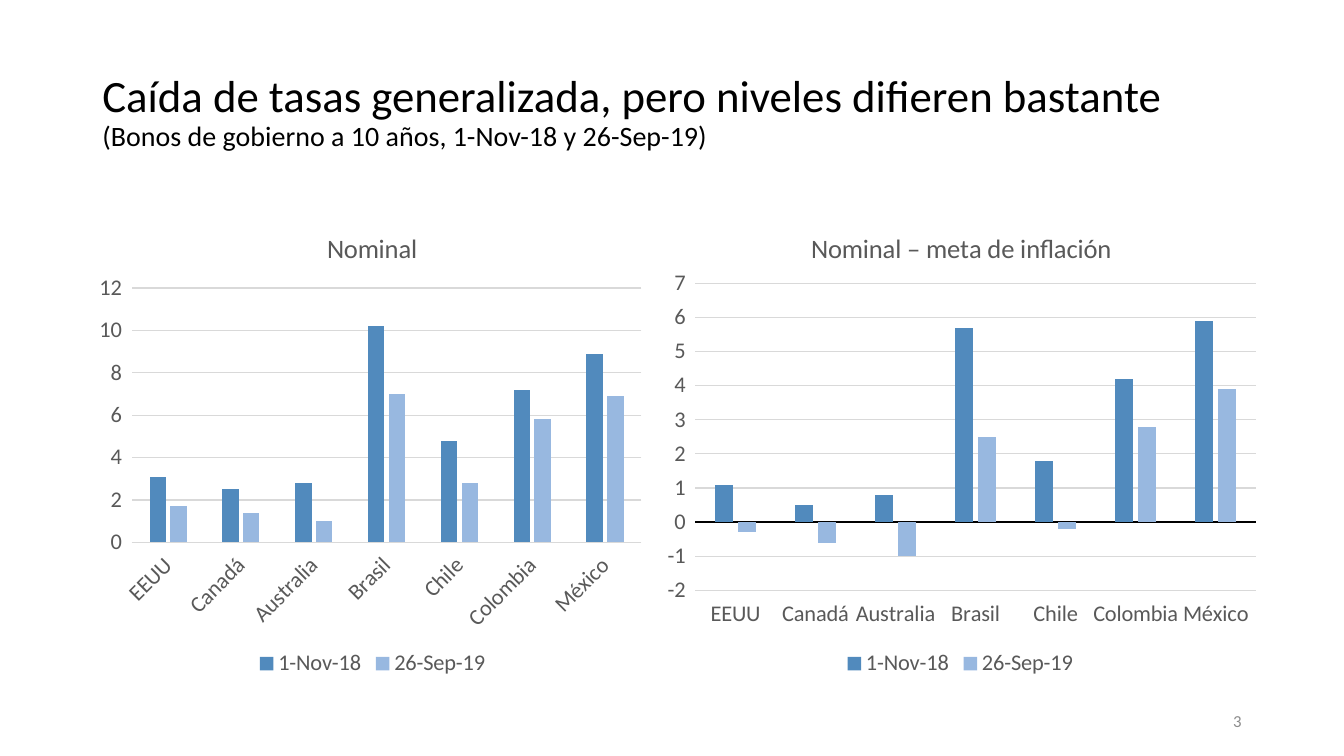
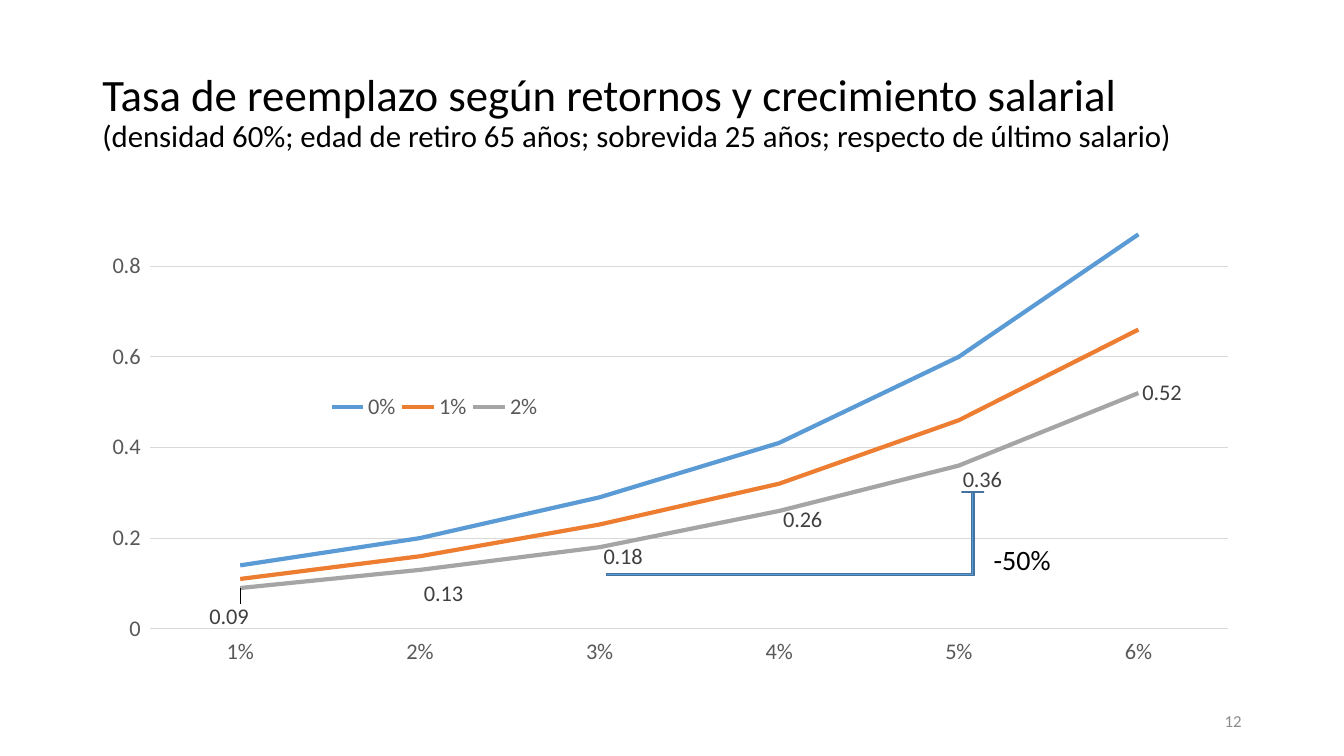
from lxml.etree import SubElement
from pptx import Presentation
from pptx.chart.data import CategoryChartData
from pptx.dml.color import RGBColor
from pptx.enum.chart import (XL_CHART_TYPE, XL_LABEL_POSITION, XL_LEGEND_POSITION,
                             XL_TICK_LABEL_POSITION, XL_TICK_MARK)
from pptx.enum.shapes import MSO_SHAPE
from pptx.enum.text import MSO_ANCHOR, PP_ALIGN
from pptx.oxml import parse_xml
from pptx.oxml.ns import nsdecls, qn
from pptx.util import Cm, Pt

FONT = "Calibri"
INK = {
    "text": "000000", "page": "8C8C8C", "axis": "595959", "grid": "D9D9D9",
    "label": "404040", "dark": "518ABD", "light": "98B8E0", "blue": "5B9BD5",
    "orange": "ED7D31", "gray": "A5A5A5", "edge": "43739E",
}
LEFT, TOP, WIDTH, HIGH = 2.33, 5.08, 29.21, 12.1
LANDS = ["EEUU", "Canadá", "Australia", "Brasil", "Chile", "Colombia", "México"]
DATES = [("1-Nov-18", "dark"), ("26-Sep-19", "light")]

RATES = {
    "title": "Caída de tasas generalizada, pero niveles difieren bastante",
    "sub": "(Bonos de gobierno a 10 años, 1-Nov-18 y 26-Sep-19)",
    "size": 20, "page": "3",
}
BARS = [
    {
        "title": "Nominal", "left": LEFT, "width": 14.12,
        "plot": (0.07, 0.18, 0.91, 0.53), "head": (0.41, 0.05),
        "scale": (0, 12, 2), "base": ("grid", 0.75), "turn": -45,
        "vals": [(3.1, 2.5, 2.8, 10.2, 4.8, 7.2, 8.9),
                 (1.7, 1.4, 1, 7, 2.8, 5.8, 6.9)],
    },
    {
        "title": "Nominal – meta de inflación", "left": 16.44, "width": 15.52,
        "plot": (0.07, 0.17, 0.91, 0.64), "head": (0.25, 0.05),
        "scale": (-2, 7, 1), "base": ("text", 1), "turn": 0,
        "vals": [(1.1, 0.5, 0.8, 5.7, 1.8, 4.2, 5.9),
                 (-0.3, -0.6, -1, 2.5, -0.2, 2.8, 3.9)],
    },
]
PENSION = {
    "title": "Tasa de reemplazo según retornos y crecimiento salarial",
    "sub": "(densidad 60%; edad de retiro 65 años; sobrevida 25 años; "
           "respecto de último salario)",
    "size": 22, "page": "12",
}
YIELDS = [f"{n}%" for n in range(1, 7)]
GROWTH = [
    ("0%", "blue", (0.14, 0.2, 0.29, 0.41, 0.6, 0.87)),
    ("1%", "orange", (0.11, 0.16, 0.23, 0.32, 0.46, 0.66)),
    ("2%", "gray", (0.09, 0.13, 0.18, 0.26, 0.36, 0.52)),
]
SHIFTS = [(-0.03, 0.06), (0, 0.05), (0, 0.02), (0, 0.02), (0, 0.03)]


def tint(name):
    return RGBColor.from_string(INK[name])


def style(font, size, ink):
    font.name, font.size, font.bold = FONT, Pt(size), False
    font.color.rgb = tint(ink)


def stroke(line, ink, width):
    line.color.rgb = tint(ink)
    line.width = Pt(width)


def box(slide, at, size, ink, text="", wrap=True):
    frame = slide.shapes.add_textbox(*map(Cm, at)).text_frame
    frame.word_wrap = wrap
    frame.vertical_anchor = MSO_ANCHOR.MIDDLE
    para = frame.paragraphs[0]
    para.text = text
    style(para.font, size, ink)
    return para


def start(deck, info):
    slide = deck.slides.add_slide(deck.slide_layouts[6])
    para = box(slide, (LEFT, 1.02, WIDTH, 3.68), 32, "text")
    para.line_spacing = 0.9
    para.add_run().text = info["title"]
    para.add_line_break()
    sub = para.add_run()
    sub.text = info["sub"]
    sub.font.size = Pt(info["size"])
    page = box(slide, (23.92, 17.65, 7.62, 1.02), 12, "page", info["page"])
    page.alignment = PP_ALIGN.RIGHT
    return slide


def place(node, spot, index, mode="edge", inner=False):
    for old in node.findall(qn("c:layout")):
        node.remove(old)
    layout = parse_xml(f"<c:layout {nsdecls('c')}><c:manualLayout/></c:layout>")
    rules = [("layoutTarget", "inner")] if inner else []
    if mode == "edge":
        rules += [("xMode", mode), ("yMode", mode)]
    rules += zip("xywh", spot)
    for tag, val in rules:
        SubElement(layout[0], qn(f"c:{tag}")).set("val", str(val))
    node.insert(index, layout)


def graph(slide, kind, left, width, cats, rows, plot, scale, base):
    data = CategoryChartData()
    data.categories = cats
    for name, _, vals in rows:
        data.add_series(name, vals)
    chart = slide.shapes.add_chart(
        kind, Cm(left), Cm(TOP), Cm(width), Cm(HIGH), data).chart
    style(chart.font, 16, "text")
    chart.has_title = False
    chart.has_legend = True
    chart.legend.position = XL_LEGEND_POSITION.BOTTOM
    chart.legend.include_in_layout = False
    style(chart.legend.font, 16, "axis")
    chart.plots[0].vary_by_categories = False
    cat, val = chart.category_axis, chart.value_axis
    for axis in (cat, val):
        axis.major_tick_mark = axis.minor_tick_mark = XL_TICK_MARK.NONE
        axis.tick_label_position = XL_TICK_LABEL_POSITION.LOW
        style(axis.tick_labels.font, 16, "axis")
    stroke(cat.format.line, *base)
    val.format.line.fill.background()
    val.minimum_scale, val.maximum_scale, val.major_unit = scale
    val.tick_labels.number_format = "General"
    val.tick_labels.number_format_is_linked = False
    stroke(val.major_gridlines.format.line, "grid", 0.75)
    place(chart.element.xpath("//c:plotArea")[0], plot, 0, inner=True)
    return chart


def columns(slide, info):
    rows = [(*date, vals) for date, vals in zip(DATES, info["vals"])]
    chart = graph(slide, XL_CHART_TYPE.COLUMN_CLUSTERED, info["left"], info["width"],
                  LANDS, rows, info["plot"], info["scale"], info["base"])
    chart.has_title = True
    para = chart.chart_title.text_frame.paragraphs[0]
    para.text = info["title"]
    style(para.font, 19, "axis")
    place(chart.element.xpath("//c:chart/c:title")[0], info["head"], 1)
    plot = chart.plots[0]
    plot.gap_width, plot.overlap = 219, -27
    for series, (_, ink) in zip(plot.series, DATES):
        series.invert_if_negative = False
        series.format.fill.solid()
        series.format.fill.fore_color.rgb = tint(ink)
    if info["turn"]:
        body = chart.element.xpath("//c:catAx/c:txPr/a:bodyPr")[0]
        body.set("rot", str(info["turn"] * 60000))


def curves(slide):
    chart = graph(slide, XL_CHART_TYPE.LINE, LEFT, WIDTH, YIELDS, GROWTH,
                  (0.05, 0.04, 0.93, 0.85), (0, 0.9, 0.2), ("grid", 0.75))
    place(chart.element.xpath("//c:legend")[0], (0.2, 0.4, 0.19, 0.05), 1)
    lines = list(chart.plots[0].series)
    for series, (_, ink, _) in zip(lines, GROWTH):
        series.smooth = False
        stroke(series.format.line, ink, 3)
    last = lines[-1]
    labels = last.data_labels
    labels.show_value = True
    labels.number_format = "#,##0.00"
    labels.number_format_is_linked = False
    labels.position = XL_LABEL_POSITION.RIGHT
    style(labels.font, 16, "label")
    for n in range(len(SHIFTS)):
        label = last.points[n].data_label
        style(label.font, 16, "label")
        label.position = XL_LABEL_POSITION.RIGHT
    for node, shift in zip(chart.element.xpath("//c:dLbl"), SHIFTS):
        place(node, shift, 1, mode="factor")
        node.insert(2, parse_xml(
            f'<c:numFmt {nsdecls("c")} formatCode="#,##0.00" sourceLinked="0"/>'))


def drop(slide):
    arrow = slide.shapes.add_shape(
        MSO_SHAPE.BENT_UP_ARROW, *map(Cm, (15.29, 12.4, 9.5, 2.11)))
    for n, val in enumerate((0.03, 0.13, 0)):
        arrow.adjustments[n] = val
    arrow.shadow.inherit = False
    arrow.fill.solid()
    arrow.fill.fore_color.rgb = tint("blue")
    stroke(arrow.line, "edge", 1)
    box(slide, (24.79, 13.54, 1.96, 1.12), 20, "text", "-50%", wrap=False)


def main():
    deck = Presentation()
    deck.slide_width, deck.slide_height = Cm(33.87), Cm(19.05)
    slide = start(deck, RATES)
    for info in BARS:
        columns(slide, info)
    slide = start(deck, PENSION)
    curves(slide)
    drop(slide)
    deck.save("out.pptx")


if __name__ == "__main__":
    main()
